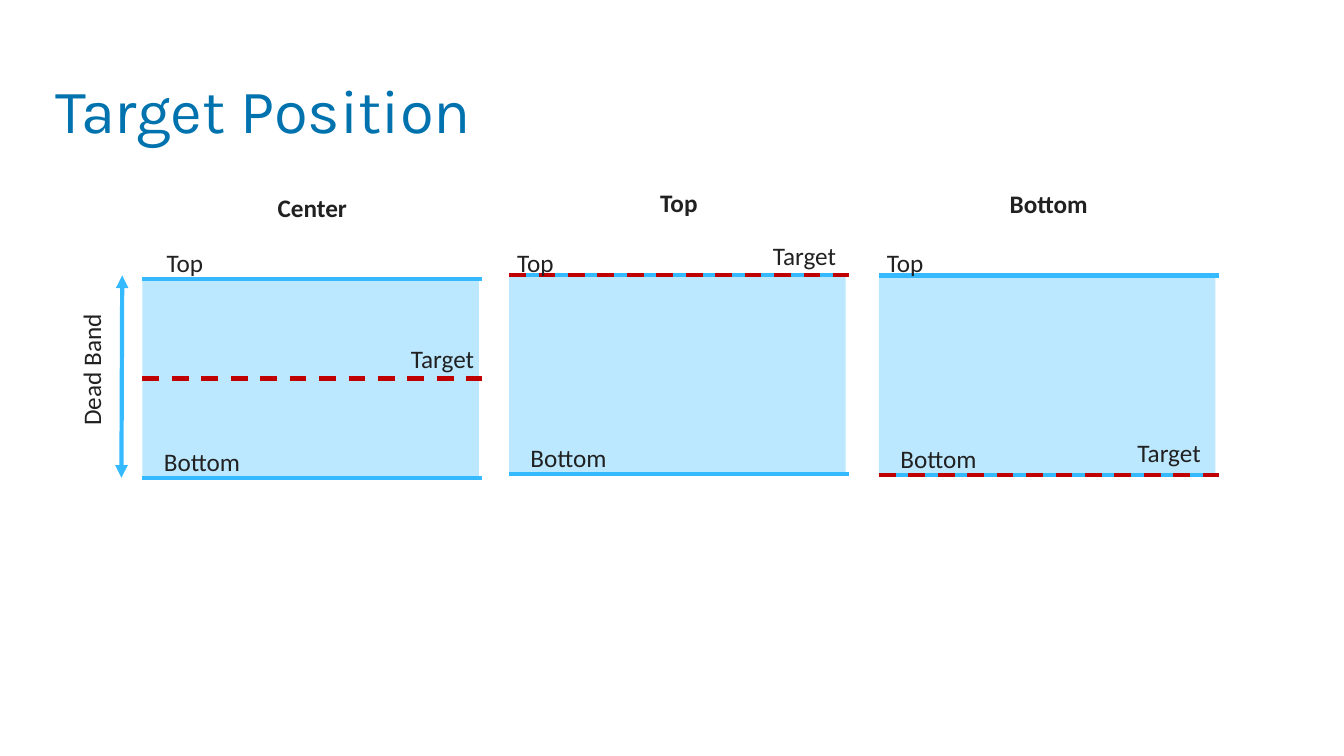
import pptx
import pptx.dml.color
import pptx.enum.dml
import pptx.enum.shapes
import pptx.enum.text
import pptx.oxml.ns
import pptx.oxml.xmlchemy
import pptx.util

Cm = pptx.util.Cm
Pt = pptx.util.Pt
RGBColor = pptx.dml.color.RGBColor
Align = pptx.enum.text.PP_ALIGN
new_element = pptx.oxml.xmlchemy.OxmlElement

# Content: positions in cm; label offsets are (x, y) from the band's top left corner
TITLE = "Target Position"
BAND_LABEL = "Dead Band"
PANELS = [
    {"heading": "Center", "corner": (3.59, 7.03), "target_share": 0.5,
     "top_label": (0.36, -0.93, 6.86), "target_label": (4.01, 1.5), "bottom_width": 7.47},
    {"heading": "Top", "corner": (12.83, 6.92), "target_share": 0,
     "top_label": (-0.05, -0.82, 4.6), "target_label": (3.89, -1), "bottom_width": 6.4},
    {"heading": "Bottom", "corner": (22.15, 6.94), "target_share": 1,
     "top_label": (-0.05, -0.82, 6.63), "target_label": (3.76, 3.96), "bottom_width": 5.21},
]

BAND_WIDTH, BAND_HEIGHT = 8.48, 5.02
EDGE_WIDTH = 8.56
LABEL_WIDTH, LABEL_HEIGHT = 4.6, 1.02
HEADING_OFFSET = (1.98, -2.32)
BOTTOM_OFFSET = (0.29, 4.1)

TITLE_BLUE = RGBColor(0x00, 0x73, 0xAF)
EDGE_BLUE = RGBColor(0x36, 0xBA, 0xFF)
BAND_BLUE = RGBColor(0xBC, 0xE8, 0xFF)
TARGET_RED = RGBColor(0xC0, 0x00, 0x00)
INK = RGBColor(0x21, 0x21, 0x21)

deck = pptx.Presentation()
deck.slide_width, deck.slide_height = Cm(33.87), Cm(19.05)
page = deck.slides.add_slide(deck.slide_layouts[5])


def write(para, text, font, size, color, bold=False):
    span = para.add_run()
    span.text = text
    span.font.name, span.font.size = font, Pt(size)
    span.font.color.rgb, span.font.bold = color, bold


def add_label(text, left, top, width=LABEL_WIDTH, align=Align.LEFT, bold=False):
    box = page.shapes.add_textbox(Cm(left), Cm(top), Cm(width), Cm(LABEL_HEIGHT))
    box.text_frame.word_wrap = True
    box.text_frame.auto_size = pptx.enum.text.MSO_AUTO_SIZE.SHAPE_TO_FIT_TEXT
    para = box.text_frame.paragraphs[0]
    para.alignment = align
    write(para, text, "Calibri", 18, INK, bold)
    return box


def add_line(start, end, color):
    line = page.shapes.add_connector(
        pptx.enum.shapes.MSO_CONNECTOR.STRAIGHT, *(Cm(value) for value in start + end))
    line.line.color.rgb, line.line.width = color, Pt(3)
    line._element.spPr.append(new_element("a:effectLst"))
    return line


def add_panel(panel):
    left, top = panel["corner"]

    # Band
    band = page.shapes.add_shape(pptx.enum.shapes.MSO_SHAPE.RECTANGLE,
                                 Cm(left), Cm(top), Cm(BAND_WIDTH), Cm(BAND_HEIGHT))
    band.shadow.inherit = False
    band.fill.solid()
    band.fill.fore_color.rgb = BAND_BLUE
    band.line.fill.background()

    # Edges and target
    for share, color in ((0, EDGE_BLUE), (1, EDGE_BLUE), (panel["target_share"], TARGET_RED)):
        height = top + share * BAND_HEIGHT
        line = add_line((left, height), (left + EDGE_WIDTH, height), color)
    line.line.dash_style = pptx.enum.dml.MSO_LINE.DASH

    # Labels
    shift_x, shift_y, width = panel["top_label"]
    add_label("Top", left + shift_x, top + shift_y, width)
    shift_x, shift_y = BOTTOM_OFFSET
    add_label("Bottom", left + shift_x, top + shift_y, panel["bottom_width"])
    shift_x, shift_y = panel["target_label"]
    add_label("Target", left + shift_x, top + shift_y, align=Align.RIGHT)
    shift_x, shift_y = HEADING_OFFSET
    add_label(panel["heading"], left + shift_x, top + shift_y, align=Align.CENTER, bold=True)


# Title
title = page.shapes.title
title.left, title.top, title.width, title.height = Cm(1.4), Cm(1.02), Cm(29.21), Cm(3.68)
frame = title.text_frame
frame.margin_left = frame.margin_top = frame.margin_right = frame.margin_bottom = 0
frame.vertical_anchor = pptx.enum.text.MSO_ANCHOR.MIDDLE
frame.auto_size = pptx.enum.text.MSO_AUTO_SIZE.NONE
frame.paragraphs[0].alignment = Align.LEFT
frame.paragraphs[0].line_spacing = 0.9
write(frame.paragraphs[0], TITLE, "Karla", 44, TITLE_BLUE)

# Panels
for panel in PANELS:
    add_panel(panel)

# Dead band measure
add_label(BAND_LABEL, 0, 8.81, align=Align.CENTER).rotation = 270
arrow = add_line((3.08, 6.94), (3.06, 12.04), EDGE_BLUE)
outline = arrow._element.spPr.find(pptx.oxml.ns.qn("a:ln"))
for end in ("a:headEnd", "a:tailEnd"):
    tip = new_element(end)
    tip.set("type", "triangle")
    outline.append(tip)

deck.save("out.pptx")
